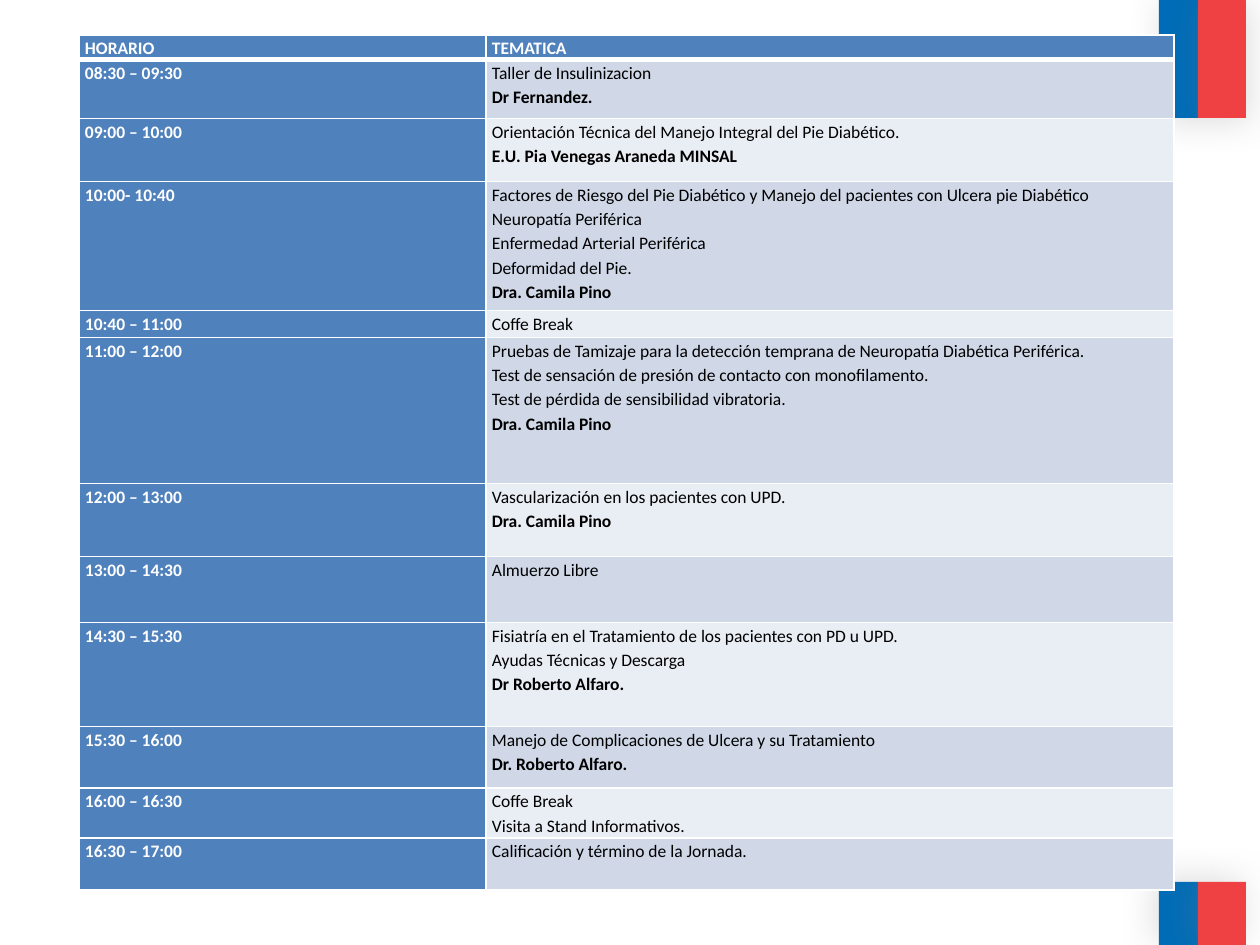
import pptx
import pptx.dml.color
import pptx.enum.shapes
import pptx.oxml
import pptx.oxml.ns
import pptx.util

PX = 914400 // 126
COLORS = {
    "header": "4F81BD", "odd": "D0D8E8", "even": "E9EDF4", "white": "FFFFFF",
    "black": "000000", "blue": "006CB7", "red": "EF4144", "shadow": "808080",
}

# Schedule: row height in px, time, topics, speaker
SCHEDULE = [
    (59, "08:30 – 09:30", ["Taller de Insulinizacion"], "Dr Fernandez."),
    (63, "09:00 – 10:00",
     ["Orientación Técnica del Manejo Integral del Pie Diabético."],
     "E.U. Pia Venegas Araneda MINSAL"),
    (129, "10:00- 10:40",
     ["Factores de Riesgo del Pie Diabético y Manejo del pacientes con Ulcera pie Diabético",
      "Neuropatía Periférica", "Enfermedad Arterial Periférica", "Deformidad del Pie."],
     "Dra. Camila Pino"),
    (27, "10:40 – 11:00", ["Coffe Break"], None),
    (146, "11:00 – 12:00",
     ["Pruebas de Tamizaje para la detección temprana de Neuropatía Diabética Periférica.",
      "Test de sensación de presión de contacto con monofilamento.",
      "Test de pérdida de sensibilidad vibratoria."],
     "Dra. Camila Pino"),
    (73, "12:00 – 13:00", ["Vascularización en los pacientes con UPD."], "Dra. Camila Pino"),
    (66, "13:00 – 14:30", ["Almuerzo Libre"], None),
    (104, "14:30 – 15:30",
     ["Fisiatría en el Tratamiento de los pacientes con PD u UPD.",
      "Ayudas Técnicas y Descarga"],
     "Dr Roberto Alfaro."),
    (62, "15:30 – 16:00", ["Manejo de Complicaciones de Ulcera y su Tratamiento"],
     "Dr. Roberto Alfaro."),
    (50, "16:00 – 16:30", ["Coffe Break", "Visita a Stand Informativos."], None),
    (52, "16:30 – 17:00", ["Calificación y término de la Jornada."], None),
]
HEADINGS = ["HORARIO", "TEMATICA"]
HEADING_HEIGHT = 24
COLUMN_WIDTHS = [407, 688]
TABLE_LEFT, TABLE_TOP = 79, 35

# Flag bands: top, height, shadow direction in degrees
FLAGS = [(0, 118, 45), (882, 63, 215)]
# Flag stripes: left, width, colour
STRIPES = [(1159, 39, "blue"), (1198, 48, "red")]


def px(length):
    return pptx.util.Emu(length * PX)


def rgb(name):
    return pptx.dml.color.RGBColor.from_string(COLORS[name])


def write_text(frame, lines, color="black", bold=False, last_bold=False):
    for index, line in enumerate(lines):
        paragraph = frame.paragraphs[0] if index == 0 else frame.add_paragraph()
        paragraph.line_spacing = 1.15
        run = paragraph.add_run()
        run.text = line
        run.font.name = "Calibri"
        run.font.size = pptx.util.Pt(10)
        run.font.bold = bold or (last_bold and index == len(lines) - 1)
        run.font.color.rgb = rgb(color)


def add_stripe(slide, left, top, width, height, color, direction):
    stripe = slide.shapes.add_shape(
        pptx.enum.shapes.MSO_SHAPE.RECTANGLE, px(left), px(top), px(width), px(height))
    stripe.fill.solid()
    stripe.fill.fore_color.rgb = rgb(color)
    stripe.line.fill.background()
    stripe.shadow.inherit = False
    effects = stripe.element.spPr.find(pptx.oxml.ns.qn("a:effectLst"))
    effects.append(pptx.oxml.parse_xml(
        f'<a:outerShdw {pptx.oxml.ns.nsdecls("a")} blurRad="{pptx.util.Pt(20)}" '
        f'dist="{pptx.util.Pt(3)}" dir="{direction * 60000}" rotWithShape="0">'
        f'<a:srgbClr val="{COLORS["shadow"]}"><a:alpha val="25000"/></a:srgbClr>'
        '</a:outerShdw>'))


def format_cell(cell, fill, top=1, bottom=1):
    cell.margin_left = cell.margin_right = px(6)
    cell.margin_top = cell.margin_bottom = 0
    properties = cell._tc.get_or_add_tcPr()
    for side, width in (("L", 1), ("R", 1), ("T", top), ("B", bottom)):
        properties.append(pptx.oxml.parse_xml(
            f'<a:ln{side} {pptx.oxml.ns.nsdecls("a")} w="{pptx.util.Pt(width)}">'
            f'<a:solidFill><a:srgbClr val="{COLORS["white"]}"/></a:solidFill></a:ln{side}>'))
    cell.fill.solid()
    cell.fill.fore_color.rgb = rgb(fill)


def add_schedule(slide):
    heights = [HEADING_HEIGHT] + [row[0] for row in SCHEDULE]
    table = slide.shapes.add_table(
        len(heights), len(COLUMN_WIDTHS), px(TABLE_LEFT), px(TABLE_TOP),
        px(sum(COLUMN_WIDTHS)), px(sum(heights))).table
    for column, width in zip(table.columns, COLUMN_WIDTHS):
        column.width = px(width)
    for row, height in zip(table.rows, heights):
        row.height = px(height)

    for index, heading in enumerate(HEADINGS):
        cell = table.cell(0, index)
        format_cell(cell, "header", bottom=3)
        write_text(cell.text_frame, [heading], color="white", bold=True)

    for index, (_, time, topics, speaker) in enumerate(SCHEDULE, start=1):
        top = 3 if index == 1 else 1
        time_cell, topic_cell = table.cell(index, 0), table.cell(index, 1)
        format_cell(time_cell, "header", top=top)
        write_text(time_cell.text_frame, [time], color="white", bold=True)
        format_cell(topic_cell, "odd" if index % 2 else "even", top=top)
        lines = topics + [speaker] if speaker else topics
        write_text(topic_cell.text_frame, lines, last_bold=bool(speaker))


def main():
    deck = pptx.Presentation()
    deck.slide_width, deck.slide_height = px(1260), px(945)
    slide = deck.slides.add_slide(deck.slide_layouts[6])

    # Flag bands at the right edge, behind the table
    for top, height, direction in FLAGS:
        for left, width, color in STRIPES:
            add_stripe(slide, left, top, width, height, color, direction)

    add_schedule(slide)
    deck.save("out.pptx")


if __name__ == "__main__":
    main()
